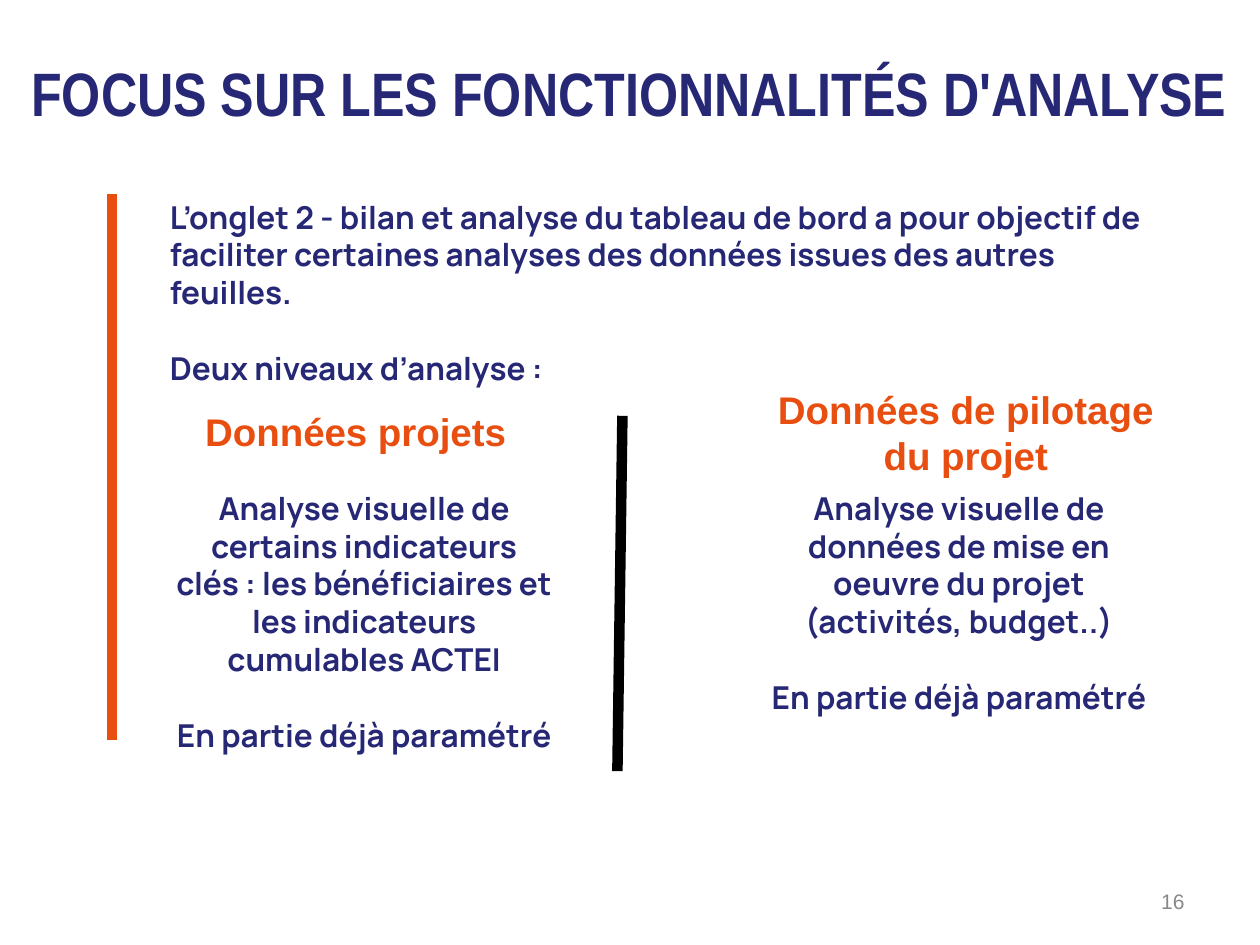
"""Build the slide presenting the two levels of analysis."""
from dataclasses import dataclass

from lxml.etree import SubElement
from pptx import Presentation
from pptx.dml.color import RGBColor
from pptx.enum.shapes import MSO_CONNECTOR
from pptx.enum.text import MSO_ANCHOR, MSO_AUTO_SIZE, PP_ALIGN
from pptx.oxml.ns import qn
from pptx.util import Inches, Pt

COLORS = {"navy": "262775", "orange": "E84E0F", "black": "000000", "grey": "888888"}
BODY_GAP = 21.6


@dataclass(frozen=True)
class Style:
    font: str
    size: float
    color: str
    bold: bool = True


@dataclass(frozen=True)
class Block:
    box: tuple[float, float, float, float]
    paragraphs: tuple[str, ...]
    style: Style
    align: PP_ALIGN = PP_ALIGN.CENTER
    inset: float = 0.1
    anchor: MSO_ANCHOR = MSO_ANCHOR.TOP


@dataclass(frozen=True)
class Rule:
    start: tuple[float, float]
    end: tuple[float, float]
    color: str


TITLE = Style("Arial Narrow", 35, "navy")
HEADING = Style("Arial", 22, "orange")
BODY = Style("Manrope", 18, "navy")
NUMBER = Style("Arial", 12, "grey", bold=False)

TITLE_BLOCK = Block((0, 0.34, 10, 0.79), ("FOCUS SUR LES FONCTIONNALITÉS D'ANALYSE",), TITLE)
BLOCKS = (
    Block((1.25, 1.52, 8.2, 1.57),
          ("L’onglet 2 - bilan et analyse du tableau de bord a pour objectif de faciliter "
           "certaines analyses des données issues des autres feuilles.",
           "Deux niveaux d’analyse :"), BODY, PP_ALIGN.LEFT, 0.05),
    Block((1.53, 3.14, 2.72, 0.59), ("Données projets",), HEADING, PP_ALIGN.LEFT),
    Block((1.25, 3.78, 3.28, 2.32),
          ("Analyse visuelle de certains indicateurs clés : les bénéficiaires et "
           "les indicateurs cumulables ACTEI", "En partie déjà paramétré"), BODY),
    Block((5.97, 2.96, 3.39, 0.59), ("Données de pilotage du projet",), HEADING),
    Block((5.97, 3.78, 3.28, 2.02),
          ("Analyse visuelle de données de mise en oeuvre du projet (activités, budget..)",
           "En partie déjà paramétré"), BODY),
    Block((7.17, 6.95, 2.33, 0.4), ("16",), NUMBER, PP_ALIGN.RIGHT, 0.05, MSO_ANCHOR.MIDDLE),
)
RULES = (
    Rule((0.89, 1.54), (0.89, 5.87), "orange"),
    Rule((4.94, 3.3), (4.9, 6.12), "black"),
)


def fill_block(sp, block: Block) -> None:
    """Place a text shape and write its paragraphs."""
    sp.left, sp.top, sp.width, sp.height = map(Inches, block.box)
    tf = sp.text_frame
    tf.word_wrap = True
    tf.auto_size = MSO_AUTO_SIZE.NONE
    tf.vertical_anchor = block.anchor
    tf.margin_left = tf.margin_right = Inches(0.1)
    tf.margin_top = tf.margin_bottom = Inches(block.inset)
    for i, text in enumerate(block.paragraphs):
        p = tf.add_paragraph() if i else tf.paragraphs[0]
        p.alignment = block.align
        p.space_before = Pt(BODY_GAP if i else 0)
        r = p.add_run()
        r.text = text
        r.font.name = block.style.font
        r.font.size = Pt(block.style.size)
        r.font.bold = block.style.bold
        r.font.color.rgb = RGBColor.from_string(COLORS[block.style.color])


def draw_rule(s, rule: Rule) -> None:
    """Draw a thick straight line without a shadow."""
    line = s.shapes.add_connector(
        MSO_CONNECTOR.STRAIGHT, *map(Inches, rule.start + rule.end))
    line.line.width = Pt(6)
    line.line.color.rgb = RGBColor.from_string(COLORS[rule.color])
    SubElement(line._element.spPr, qn("a:effectLst"))


def main() -> None:
    """Assemble and save the slide."""
    prs = Presentation()
    prs.slide_width, prs.slide_height = Inches(10), Inches(7.5)
    s = prs.slides.add_slide(prs.slide_layouts[5])
    fill_block(s.shapes.title, TITLE_BLOCK)
    for rule in RULES:
        draw_rule(s, rule)
    for block in BLOCKS:
        fill_block(s.shapes.add_textbox(*map(Inches, block.box)), block)
    prs.save("out.pptx")


if __name__ == "__main__":
    main()
